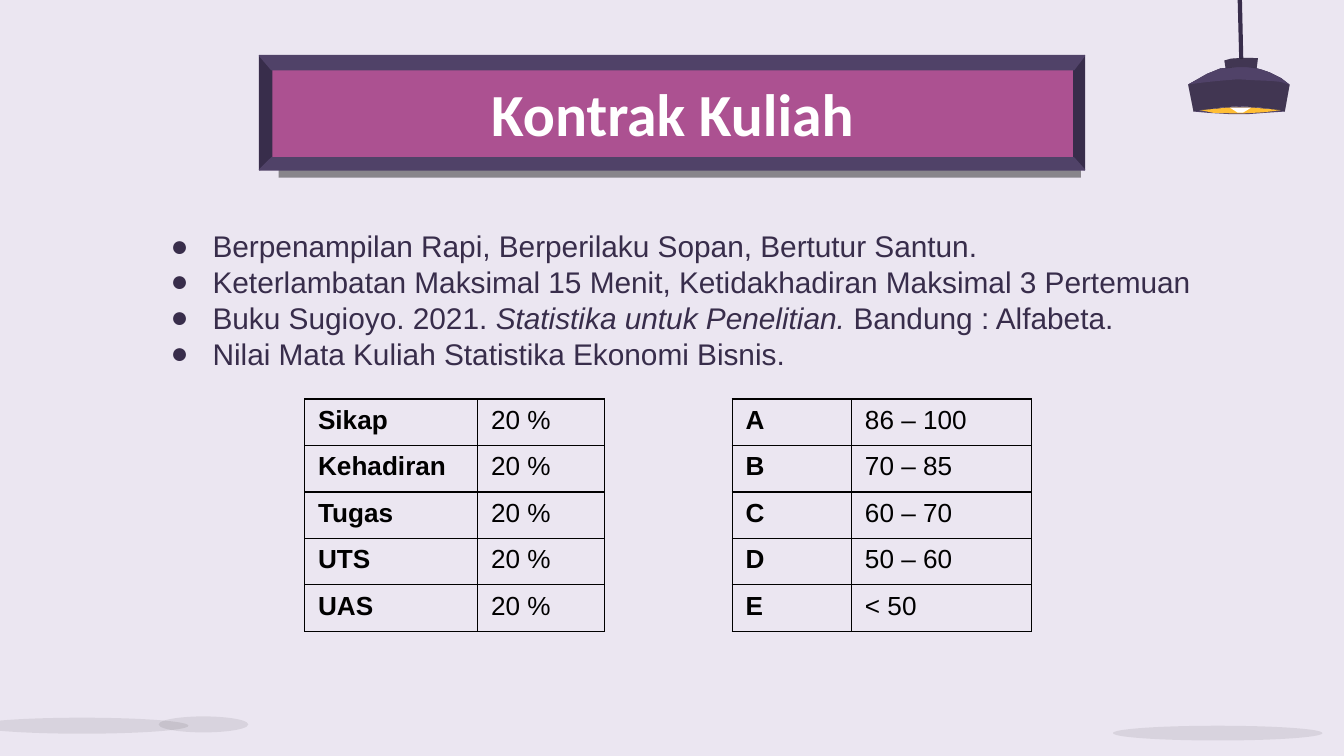
from lxml import etree
from pptx import Presentation
from pptx.dml.color import RGBColor
from pptx.enum import shapes, text
from pptx.oxml import ns, parse_xml
from pptx.util import Pt

NS = ns.nsdecls("a")
DARK, PLUM, PINK, INK = "382D4B", "504268", "AC5191", "191919"


def paint(fill, color, alpha=100):
    fill.solid()
    fill.fore_color.rgb = RGBColor.from_string(color)
    if alpha < 100:
        clr = fill._xPr.find(".//" + ns.qn("a:srgbClr"))
        etree.SubElement(clr, ns.qn("a:alpha")).set("val", str(alpha * 1000))


def draw(pts, color, alpha=100, line=0):
    pts = [(Pt(x), Pt(y)) for x, y in pts]
    pen = slide.shapes.build_freeform(*pts[0])
    pen.add_line_segments(pts[1:], close=True)
    shape = pen.convert_to_shape()
    shape.shadow.inherit = False
    paint(shape.fill, color, alpha)
    if line:
        paint(shape.line.fill, color)
        shape.line.width = Pt(line)
    else:
        shape.line.fill.background()
    return shape


prs = Presentation()
prs.slide_width, prs.slide_height = Pt(720), Pt(405)
slide = prs.slides.add_slide(prs.slide_layouts[1])
paint(slide.background.fill, "EBE6F1")

# Lamp: edges run from left to right
crown = [(636.5, 45.3), (641.5, 42.5), (646.6, 39.6), (653.8, 36.7),
         (661.7, 36), (671, 36), (676.1, 37.4), (680.4, 38.9),
         (686.2, 41.8), (690.9, 45.4)]
brow = [(641.5, 44.6), (647.3, 43.9), (654.5, 43.2), (663.1, 42.5),
        (671.8, 43), (681.1, 43.4), (686.2, 43.9)]
mouth = [(639.4, 59.8), (645.1, 59), (654.5, 57.6), (663.8, 56.9),
         (674.6, 57.6), (680.4, 58.3), (688.3, 59.8)]
base = [(647.3, 60.5), (659.5, 61.2), (668.2, 61.2), (677.5, 60.5)]
glow = [(643, 59), (651.6, 58.3), (657.4, 57.6), (671, 57.6), (678.2, 58.3),
        (686.2, 59), (676.8, 60.2), (664.6, 60.8), (650.2, 60.5)]
bulb = [(658.8, 57.6), (661, 59), (663, 60.3), (666, 60.3), (668.2, 59),
        (670.3, 57.6)]
neck = [(655.9, 32.4), (659.5, 31.4), (665.3, 31), (673.9, 31.1),
        (673.2, 36.7), (668.2, 36), (662.4, 36), (656.6, 36.7)]
cord = [(663.8, 0), (664.6, 31), (665.3, 31), (664.6, 0)]
shade = crown + mouth[::-1]
draw(shade, PLUM)
draw(mouth + base[::-1], PLUM)
draw(glow, "FFBE34")
draw(neck, PLUM)
draw(cord, DARK, line=1.5)
draw(bulb, "FFFFFF")
draw(shade, INK, 27)
draw(crown + brow[::-1], PLUM)
draw(neck, INK, 27)

# Floor shadows
for x, y, w, h in [(-13, 384.5, 114, 8.6), (596.2, 388.8, 112.3, 7.9),
                   (85, 383.8, 48, 8.6)]:
    oval = slide.shapes.add_shape(shapes.MSO_SHAPE.OVAL,
                                  Pt(x), Pt(y), Pt(w), Pt(h))
    oval.shadow.inherit = False
    paint(oval.fill, "000000", 8)
    oval.line.fill.background()

# Banner: panel with a mitred frame, corners clockwise from top left
outer = [(139, 29.8), (581, 29.8), (581, 91), (139, 91)]
inner = [(145.5, 37.4), (575.3, 37.4), (575.3, 84.6), (145.5, 84.6)]
panel = draw(inner, PINK)
cast = panel._element.spPr.find(ns.qn("a:effectLst"))
cast.append(parse_xml(
    f'<a:outerShdw {NS} dist="142240" dir="4200000" algn="bl" '
    'rotWithShape="0"><a:srgbClr val="000000"><a:alpha val="41000"/>'
    '</a:srgbClr></a:outerShdw>'))
for i, color in [(3, DARK), (1, DARK), (2, PLUM), (0, PLUM)]:
    j = (i + 1) % 4
    draw([outer[i], outer[j], inner[j], inner[i]], color, line=0.75)

# Title and list placeholders, raised above the banner
title, body = slide.shapes.title, slide.placeholders[1]
for box, x, y, w, h in [(body, 84.2, 101.5, 581, 118),
                        (title, 56.9, 42.5, 607, 36)]:
    box.left, box.top, box.width, box.height = Pt(x), Pt(y), Pt(w), Pt(h)
    slide.shapes._spTree.append(box._element)
    frame = box.text_frame
    frame.word_wrap = True
    frame.auto_size = text.MSO_AUTO_SIZE.NONE
    frame.vertical_anchor = text.MSO_ANCHOR.MIDDLE
    frame.margin_left = frame.margin_right = Pt(7.2)
    frame.margin_top = frame.margin_bottom = Pt(7.2)

title.text_frame.text = "Kontrak Kuliah"
head = title.text_frame.paragraphs[0]
head.alignment = text.PP_ALIGN.CENTER
head.font.name, head.font.size, head.font.bold = "Calibri", Pt(32), True
paint(head.font.fill, "FFFFFF")

items = [
    ["Berpenampilan Rapi, Berperilaku Sopan, Bertutur Santun."],
    ["Keterlambatan Maksimal 15 Menit, Ketidakhadiran Maksimal 3 Pertemuan"],
    ["Buku Sugioyo. 2021. ", "Statistika untuk Penelitian. ",
     "Bandung : Alfabeta."],
    ["Nilai Mata Kuliah Statistika Ekonomi Bisnis."],
]
for n, parts in enumerate(items):
    frame = body.text_frame
    para = frame.add_paragraph() if n else frame.paragraphs[0]
    para.space_before = Pt(0)
    props = para._p.get_or_add_pPr()
    props.set("marL", str(Pt(22.5)))
    props.set("indent", str(Pt(-22.5)))
    for tag in (f'buClr {NS}><a:srgbClr val="{DARK}"/></a:buClr',
                f'buFont {NS} typeface="Arial"/',
                f'buChar {NS} char="●"/'):
        props.append(parse_xml(f"<a:{tag}>"))
    para.font.name, para.font.size = "Arial", Pt(16)
    paint(para.font.fill, DARK)
    for k, part in enumerate(parts):
        run = para.add_run()
        run.text = part
        if k == 1:
            run.font.italic = True

# Weight and grade tables
weights = [(name, "20 %")
           for name in ("Sikap", "Kehadiran", "Tugas", "UTS", "UAS")]
grades = [("A", "86 – 100"), ("B", "70 – 85"), ("C", "60 – 70"),
          ("D", "50 – 60"), ("E", "< 50")]
for x, cols, rows in [(163.2, (92.7, 68), weights),
                      (392.2, (64, 96.6), grades)]:
    table = slide.shapes.add_table(len(rows), 2, Pt(x), Pt(213.8),
                                   Pt(sum(cols)), Pt(124.5)).table
    table.first_row = table.horz_banding = False
    for col, w in zip(table.columns, cols):
        col.width = Pt(w)
    for r, row in enumerate(rows):
        for c, label in enumerate(row):
            cell = table.cell(r, c)
            cell.text = label
            cell.fill.background()
            font = cell.text_frame.paragraphs[0].font
            font.name, font.size, font.bold = "Arial", Pt(14), c == 0
            paint(font.fill, "000000")
            for k, side in enumerate("LRTB"):
                cell._tc.tcPr.insert(k, parse_xml(
                    f'<a:ln{side} {NS} w="9525"><a:solidFill>'
                    f'<a:srgbClr val="000000"/></a:solidFill></a:ln{side}>'))

prs.save("out.pptx")
